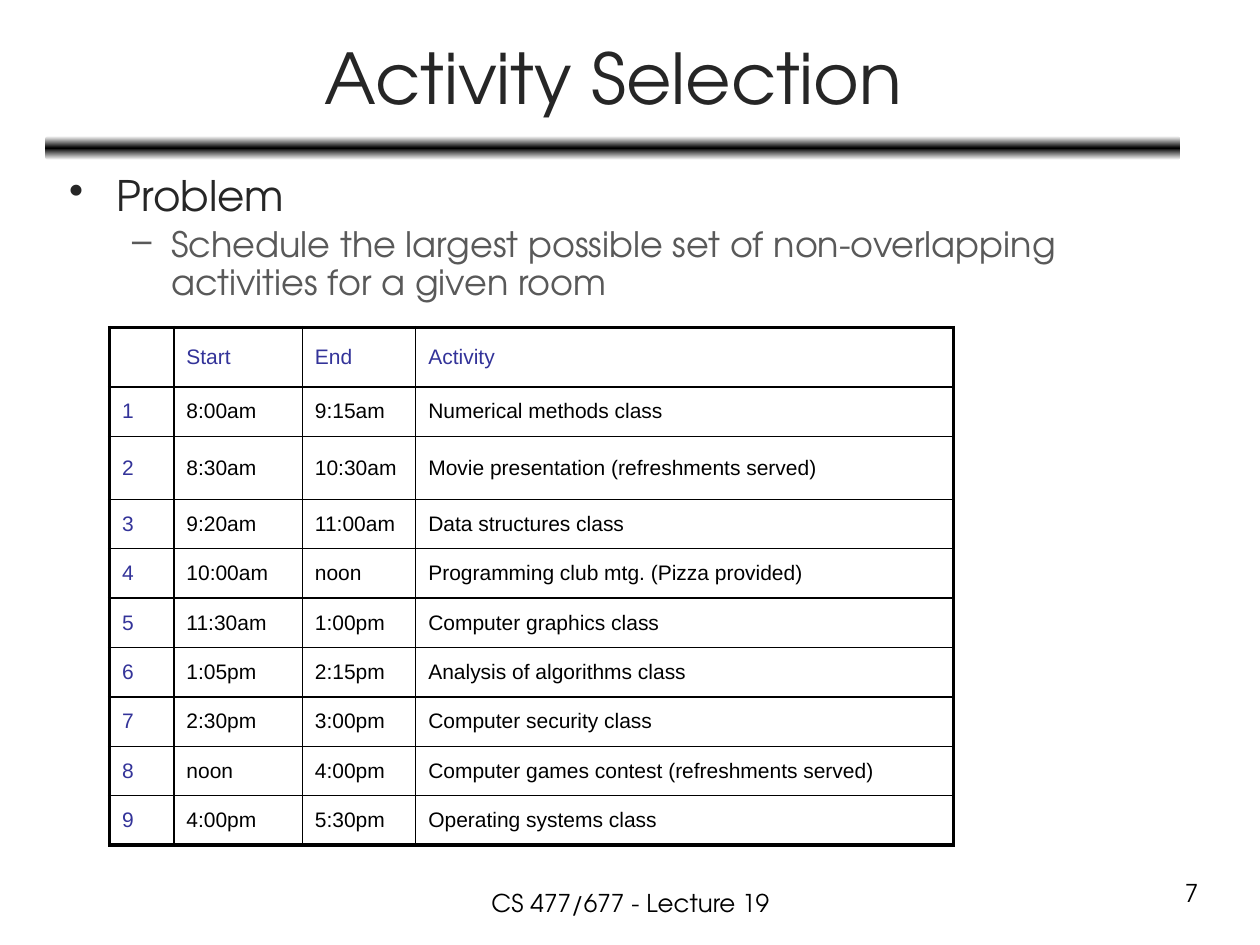
from copy import deepcopy
from dataclasses import dataclass

from lxml import etree
from pptx import Presentation, util as u
from pptx.dml.color import RGBColor
from pptx.enum import shapes, text
from pptx.oxml.ns import qn

TITLE = "Activity Selection"
FOOTER = "CS 477/677 - Lecture 19"
PAGE_NUMBER = "7"
HEADER = ("", "Start", "End", "Activity")
ACTIVITIES = [
    ("8:00am", "9:15am", "Numerical methods class"),
    ("8:30am", "10:30am", "Movie presentation (refreshments served)"),
    ("9:20am", "11:00am", "Data structures class"),
    ("10:00am", "noon", "Programming club mtg. (Pizza provided)"),
    ("11:30am", "1:00pm", "Computer graphics class"),
    ("1:05pm", "2:15pm", "Analysis of algorithms class"),
    ("2:30pm", "3:00pm", "Computer security class"),
    ("noon", "4:00pm", "Computer games contest (refreshments served)"),
    ("4:00pm", "5:30pm", "Operating systems class"),
]


@dataclass(frozen=True)
class Theme:
    display: str = "TeX Gyre Adventor"
    plain: str = "Arial"
    ink: str = "000000"
    heading: str = "262626"
    detail: str = "595959"
    accent: str = "333399"
    paper: str = "FFFFFF"
    title_size: int = 40
    problem_size: int = 24
    detail_size: int = 20
    footer_size: int = 14
    table_size: int = 12
    inner_line: float = 1
    outer_line: float = 2.25


THEME = Theme()
# wording, size, colour, bullet, left margin and hanging indent in inches
BULLETS = [
    ("Problem", THEME.problem_size, THEME.heading, "•", 0.38, 0.38),
    ("Schedule the largest possible set of non-overlapping activities for a given room",
     THEME.detail_size, THEME.detail, "–", 0.81, 0.31),
]

# left, top, width, height as percentages of the slide
AREAS = {
    "title": (3.7, 1.47, 90, 13.2),
    "bar": (3.6, 14.4, 90.1, 2.53),
    "body": (4.5, 17.87, 83, 16.13),
    "table": (8.7, 34.67, 67, 55.07),
    "footer": (34.2, 93.33, 31.7, 4.67),
    "number": (72.8, 92.27, 23.3, 4.67),
}
COLUMN_SHARES = (5.1, 10.2, 9, 42.7)
ROW_SHARES = [6.27, 5.23, 6.67] + [5.23] * 7

deck = Presentation()
deck.slide_width, deck.slide_height = u.Inches(10), u.Inches(7.5)
page = deck.slides.add_slide(deck.slide_layouts[5])


def across(percent):
    return int(deck.slide_width * percent / 100)


def down(percent):
    return int(deck.slide_height * percent / 100)


def area(name):
    left, top, width, height = AREAS[name]
    return across(left), down(top), across(width), down(height)


def write(para, wording, size, color, font=THEME.display, align=None):
    para.text = wording
    para.alignment = align
    for span in para.runs:
        span.font.name = font
        span.font.size = u.Pt(size)
        span.font.color.rgb = RGBColor.from_string(color)


def add_text_box(name):
    frame = page.shapes.add_textbox(*area(name)).text_frame
    frame.word_wrap = True
    return frame


def add_title():
    title = page.shapes.title
    title.left, title.top, title.width, title.height = area("title")
    frame = title.text_frame
    frame.auto_size = text.MSO_AUTO_SIZE.NONE
    frame.vertical_anchor = text.MSO_ANCHOR.MIDDLE
    write(frame.paragraphs[0], TITLE, THEME.title_size, THEME.heading,
          align=text.PP_ALIGN.CENTER)


def add_bar():
    bar = page.shapes.add_shape(shapes.MSO_SHAPE.ROUNDED_RECTANGLE, *area("bar"))
    bar.shadow.inherit = False
    bar.line.fill.background()
    bar.fill.gradient()
    bar.fill.gradient_angle = 90
    first = bar.element.spPr.find(".//" + qn("a:gs"))
    first.addnext(deepcopy(first))
    colors = (THEME.paper, THEME.ink, THEME.paper)
    for index, (stop, color) in enumerate(zip(bar.fill.gradient_stops, colors)):
        stop.position = index / 2
        stop.color.rgb = RGBColor.from_string(color)


def add_bullets():
    frame = add_text_box("body")
    for index, (wording, size, color, mark, margin, hang) in enumerate(BULLETS):
        para = frame.add_paragraph() if index else frame.paragraphs[0]
        write(para, wording, size, color)
        para.level = index
        para.line_spacing = 0.9
        para.space_before = u.Pt(size * 0.2)
        props = para._p.get_or_add_pPr()
        props.set("marL", str(u.Inches(margin)))
        props.set("indent", str(-u.Inches(hang)))
        etree.SubElement(props, qn("a:buChar")).set("char", mark)


def set_borders(cell, outer_sides):
    """Draw all four sides, heavier where the side is on the table's edge."""
    props = cell._tc.get_or_add_tcPr()
    for index, side in enumerate("LRTB"):
        weight = THEME.outer_line if side in outer_sides else THEME.inner_line
        line = etree.Element(qn("a:ln" + side), w=str(u.Pt(weight)))
        fill = etree.SubElement(line, qn("a:solidFill"))
        etree.SubElement(fill, qn("a:srgbClr")).set("val", THEME.ink)
        props.insert(index, line)


def add_schedule():
    rows = [HEADER] + [(str(n), *entry) for n, entry in enumerate(ACTIVITIES, 1)]
    last_row, last_col = len(rows) - 1, len(HEADER) - 1
    table = page.shapes.add_table(len(rows), len(HEADER), *area("table")).table
    table.first_row = table.horz_banding = False
    for column, share in zip(table.columns, COLUMN_SHARES):
        column.width = across(share)
    for row, share in zip(table.rows, ROW_SHARES):
        row.height = down(share)
    for r, row in enumerate(rows):
        for c, wording in enumerate(row):
            cell = table.cell(r, c)
            cell.fill.background()
            cell.vertical_anchor = text.MSO_ANCHOR.MIDDLE
            edges = {"L": c == 0, "R": c == last_col, "T": r == 0, "B": r == last_row}
            set_borders(cell, [side for side, outer in edges.items() if outer])
            if wording:
                para = cell.text_frame.paragraphs[0]
                color = THEME.accent if r == 0 or c == 0 else THEME.ink
                write(para, wording, THEME.table_size, color, THEME.plain)
                para.space_before = u.Pt(THEME.table_size * 0.2)


def add_footer():
    for name, wording, align in (("footer", FOOTER, text.PP_ALIGN.CENTER),
                                 ("number", PAGE_NUMBER, text.PP_ALIGN.RIGHT)):
        write(add_text_box(name).paragraphs[0], wording, THEME.footer_size,
              THEME.ink, align=align)


def main():
    add_bar()
    add_title()
    add_schedule()
    add_bullets()
    add_footer()
    deck.save("out.pptx")


if __name__ == "__main__":
    main()
